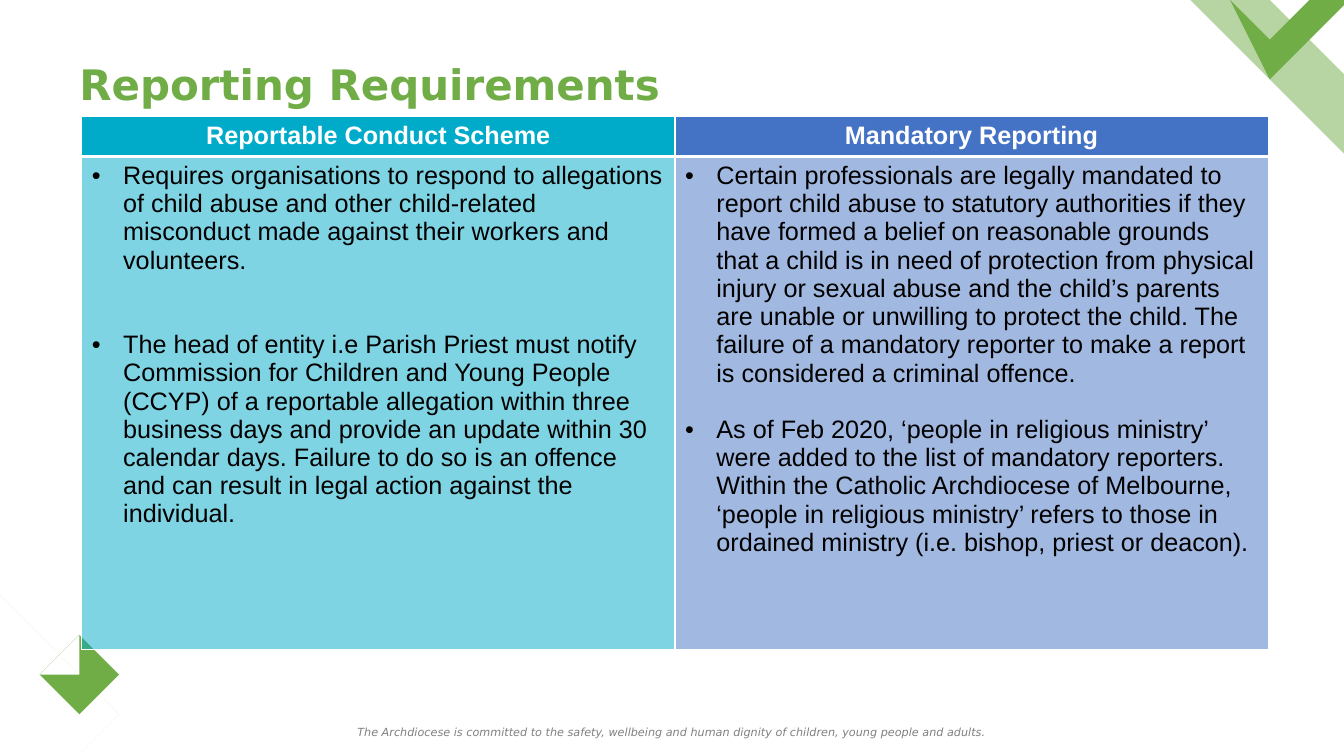
from lxml import etree
from pptx import Presentation
from pptx.dml.color import RGBColor
from pptx.enum.text import MSO_ANCHOR as Anchor, PP_ALIGN as Align
from pptx.oxml.ns import qn
from pptx.util import Cm, Pt

WIDE, HIGH = 33.87, 19.05
GREEN, WHITE = "70AD46", "FFFFFF"
SANS = "DejaVu Sans"
LINE = 20.1  # height of one body line in points

COLUMNS = [
    ("Reportable Conduct Scheme", "00ABCA", 2 * LINE, [
        "Requires organisations to respond to allegations of child abuse and other "
        "child-related misconduct made against their workers and volunteers.",
        "The head of entity i.e Parish Priest must notify Commission for Children and "
        "Young People (CCYP) of a reportable allegation within three business days and "
        "provide an update within 30 calendar days. Failure to do so is an offence and "
        "can result in legal action against the individual."]),
    ("Mandatory Reporting", "4472C4", LINE, [
        "Certain professionals are legally mandated to report child abuse to statutory "
        "authorities if they have formed a belief on reasonable grounds that a child is "
        "in need of protection from physical injury or sexual abuse and the child’s "
        "parents are unable or unwilling to protect the child. The failure of a "
        "mandatory reporter to make a report is considered a criminal offence.",
        "As of Feb 2020, ‘people in religious ministry’ were added to the list of "
        "mandatory reporters. Within the Catholic Archdiocese of Melbourne, ‘people in "
        "religious ministry’ refers to those in ordained ministry (i.e. bishop, priest "
        "or deacon)."]),
]


def color(code):
    return RGBColor.from_string(code)


def paint(fill, node, code, alpha=100):
    """Fill solid; node is the XML element that holds the fill."""
    fill.solid()
    fill.fore_color.rgb = color(code)
    if alpha < 100:
        tone = node.find(qn("a:solidFill")).find(qn("a:srgbClr"))
        etree.SubElement(tone, qn("a:alpha"), val=str(alpha * 1000))


def write(frame, *texts, size=18, font="Arial", code="000000", bold=False,
          italic=False, align=Align.LEFT, bullet=False, gap=0):
    frame.word_wrap = True
    for i, text in enumerate(texts):
        para = frame.add_paragraph() if i else frame.paragraphs[0]
        if bullet:
            props = para._p.get_or_add_pPr()
            props.set("marL", str(Cm(0.79)))
            props.set("indent", str(-Cm(0.79)))
            etree.SubElement(props, qn("a:buFont"), typeface="Arial")
            etree.SubElement(props, qn("a:buChar"), char="•")
        para.alignment = align
        if i:
            para.space_before = Pt(gap)
        run = para.add_run()
        run.text = text
        style = run.font
        style.size, style.name = Pt(size), font
        style.bold, style.italic = bold, italic
        style.color.rgb = color(code)


def label(slide, box, text, **style):
    frame = slide.shapes.add_textbox(*map(Cm, box)).text_frame
    frame.vertical_anchor = Anchor.MIDDLE
    write(frame, text, **style)


def outline(slide, *loops, alpha=100):
    """Draw closed loops of points, given in centimetres, as one green shape."""
    pen = None
    for first, *rest in loops:
        if pen is None:
            pen = slide.shapes.build_freeform(*first, scale=Cm(1))
        else:
            pen.move_to(*first)
        pen.add_line_segments(rest, close=True)
    shape = pen.convert_to_shape()
    shape.shadow.inherit = False
    shape.line.fill.background()
    paint(shape.fill, shape._element.spPr, GREEN, alpha)


def top_art(slide, right, top):
    outline(slide, [(right, top + 4.29), (right - 4.28, top), (right - 2.12, top),
                    (right, top + 2.12)], alpha=50)
    mid, out, inner = right - 1.64, 1.5, 1.14
    outline(slide, [(mid, top + out), (mid - out, top), (mid - inner, top),
                    (mid, top + inner), (mid + inner, top), (mid + out, top)])


def low_art(slide, left, base):
    tip = base - 0.99
    outline(slide, [(left, base - 4.14), (left, base - 3.71), (left + 2.72, tip),
                    (left + 1.73, base), (left + 2.13, base), (left + 3.12, tip)],
            alpha=25)
    x, y = left + 1.57, base - 2.36
    outer, inner = 0.95, 0.65
    outline(slide,
            [(x, y - outer), (x + outer, y), (x, y + outer), (x - outer, y)],
            [(x, y - inner), (x - inner, y), (x, y + inner), (x + inner, y)])


def border(cell, **widths):
    """Draw white borders; widths are in points, by side L, R, T or B."""
    props = cell._tc.get_or_add_tcPr()
    for side in "LRTB":
        edge = etree.SubElement(props, qn(f"a:ln{side}"),
                                w=str(Pt(widths.get(side, 1))))
        fill = etree.SubElement(edge, qn("a:solidFill"))
        etree.SubElement(fill, qn("a:srgbClr"), val=WHITE)


def tint(cell, code, alpha=100):
    paint(cell.fill, cell._tc.get_or_add_tcPr(), code, alpha)


def compare(slide, box):
    table = slide.shapes.add_table(2, len(COLUMNS), *map(Cm, box)).table
    table.horz_banding = False
    table.rows[0].height = Cm(1)
    table.rows[1].height = Cm(box[3] - 1)
    for i, (head, code, gap, points) in enumerate(COLUMNS):
        top, body = table.cell(0, i), table.cell(1, i)
        border(top, B=3)
        border(body, T=3)
        tint(top, code)
        tint(body, code, 50)
        write(top.text_frame, head, code=WHITE, bold=True, align=Align.CENTER)
        write(body.text_frame, *points, bullet=True, gap=gap)


def main():
    deck = Presentation()
    deck.slide_width, deck.slide_height = Cm(WIDE), Cm(HIGH)
    slide = deck.slides.add_slide(deck.slide_layouts[6])
    label(slide, (0, 18.14, WIDE, 0.6),
          "The Archdiocese is committed to the safety, wellbeing and human dignity of "
          "children, young people and adults.",
          size=8, font=SANS, code="808080", italic=True, align=Align.CENTER)
    top_art(slide, WIDE, 0)
    low_art(slide, 0, HIGH)
    label(slide, (1.75, 0.8, 30.48, 2.6), "Reporting Requirements",
          size=30, font=SANS, code=GREEN, bold=True)
    compare(slide, (2.06, 2.93, 29.9, 13.41))
    deck.save("out.pptx")


if __name__ == "__main__":
    main()
